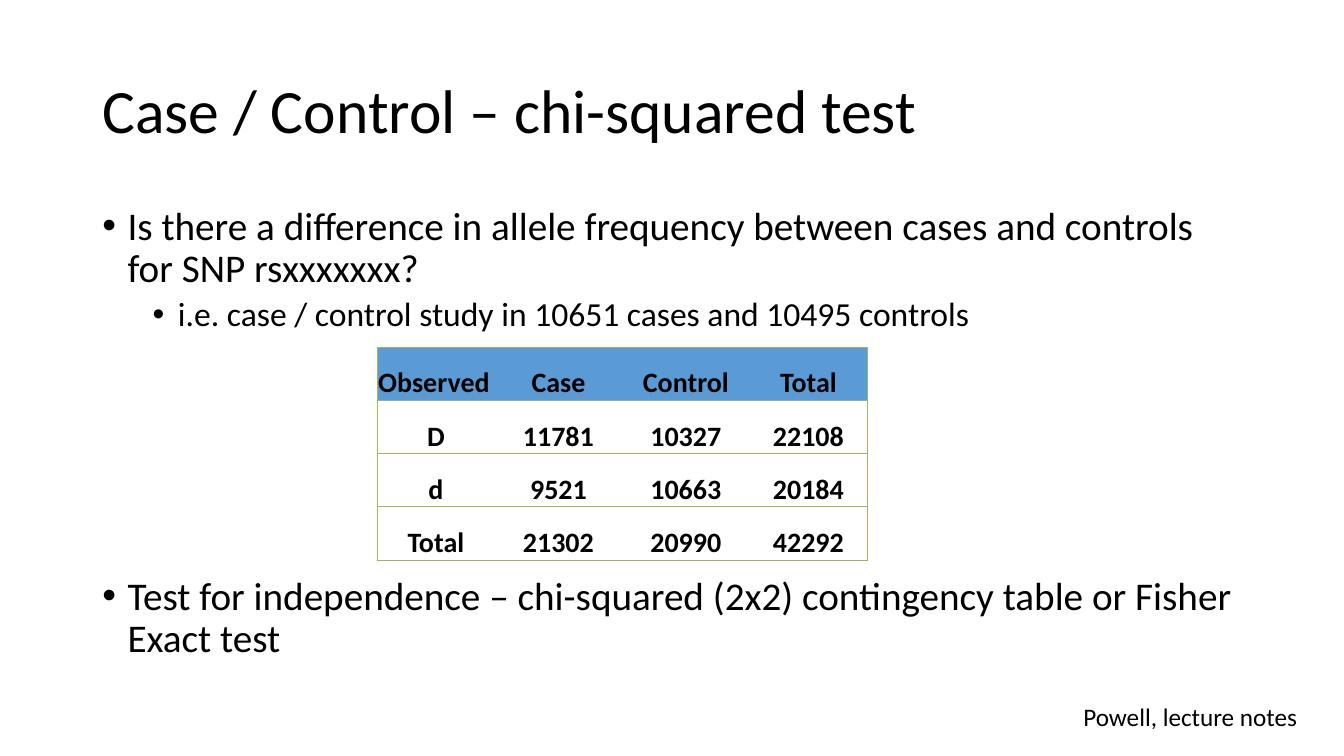
from lxml import etree
from pptx import Presentation
from pptx.dml.color import RGBColor
from pptx.enum.text import MSO_ANCHOR, PP_ALIGN
from pptx.oxml.ns import qn
from pptx.util import Cm, Pt

MIDDLE, TOP, BOTTOM = MSO_ANCHOR.MIDDLE, MSO_ANCHOR.TOP, MSO_ANCHOR.BOTTOM
LEFT, CENTER = PP_ALIGN.LEFT, PP_ALIGN.CENTER
BLACK = RGBColor(0x00, 0x00, 0x00)
HEADER_BLUE = RGBColor(0x5B, 0x9B, 0xD5)
BORDER_GREEN = RGBColor(0x9B, 0xBB, 0x59)

OBSERVED_COUNTS = [
    ["Observed", "Case", "Control", "Total"],
    ["D", "11781", "10327", "22108"],
    ["d", "9521", "10663", "20184"],
    ["Total", "21302", "20990", "42292"],
]
COLUMN_WIDTHS = [2.97, 3.21, 3.21, 2.97]
ROW_HEIGHT = 1.34


class SlideBuilder:
    font = "Calibri"

    def __init__(self, page):
        self.page = page

    def style(self, para, size, bold=False):
        for span in para.runs:
            span.font.name = self.font
            span.font.size = Pt(size)
            span.font.bold = bold
            span.font.color.rgb = BLACK

    def text(self, left, top, width, height, words, size, anchor=TOP, wrap=True):
        box = self.page.shapes.add_textbox(Cm(left), Cm(top), Cm(width), Cm(height))
        frame = box.text_frame
        frame.word_wrap = wrap
        frame.vertical_anchor = anchor
        frame.text = words
        self.style(frame.paragraphs[0], size)
        return frame

    def bullets(self, left, top, width, height, items):
        frame = self.text(left, top, width, height, "\n".join(item[0] for item in items), 28)
        for para, (_, level, size, space) in zip(frame.paragraphs, items):
            self.style(para, size)
            para.level = level
            para.line_spacing = 0.9
            para.space_before = Pt(space)
            properties = para._p.get_or_add_pPr()
            properties.set("marL", str(Cm(0.635 + 1.27 * level)))
            properties.set("indent", str(Cm(-0.635)))
            etree.SubElement(properties, qn("a:buFont"), typeface="Arial")
            etree.SubElement(properties, qn("a:buChar"), char="•")

    def borders(self, cell, visible):
        properties = cell._tc.get_or_add_tcPr()
        for position, side in enumerate("LRTB"):
            line = etree.Element(qn(f"a:ln{side}"), w=str(Pt(0.5)))
            if side in visible:
                fill = etree.SubElement(line, qn("a:solidFill"))
                etree.SubElement(fill, qn("a:srgbClr"), val=str(BORDER_GREEN))
            else:
                etree.SubElement(line, qn("a:noFill"))
            properties.insert(position, line)

    def table(self, left, top, widths, row_height, rows, size):
        frame = self.page.shapes.add_table(
            len(rows), len(widths), Cm(left), Cm(top),
            Cm(sum(widths)), Cm(row_height * len(rows)))
        grid = frame.table
        for column, width in zip(grid.columns, widths):
            column.width = Cm(width)
        for r, values in enumerate(rows):
            grid.rows[r].height = Cm(row_height)
            for c, value in enumerate(values):
                cell = grid.cell(r, c)
                cell.text = value
                cell.vertical_anchor = BOTTOM
                cell.margin_left = cell.margin_right = cell.margin_top = Cm(0.03)
                cell.margin_bottom = Cm(0)
                if r == 0:
                    cell.fill.solid()
                    cell.fill.fore_color.rgb = HEADER_BLUE
                else:
                    cell.fill.background()
                para = cell.text_frame.paragraphs[0]
                para.alignment = LEFT if r == c == 0 else CENTER
                self.style(para, size, bold=True)
                outer = "L" if c == 0 else "R" if c == len(widths) - 1 else ""
                self.borders(cell, "TB" + outer)


def main():
    deck = Presentation()
    deck.slide_width, deck.slide_height = Cm(33.87), Cm(19.05)
    builder = SlideBuilder(deck.slides.add_slide(deck.slide_layouts[6]))

    title = builder.text(2.33, 1.01, 29.21, 3.68, "Case / Control – chi-squared test", 44, MIDDLE)
    title.paragraphs[0].line_spacing = 0.9
    builder.bullets(2.33, 5.07, 29.21, 12.09, [
        ("Is there a difference in allele frequency between cases and controls "
         "for SNP rsxxxxxxx?", 0, 28, 10),
        ("i.e. case / control study in 10651 cases and 10495 controls", 1, 24, 5),
        ("Test for independence – chi-squared (2x2) contingency table or "
         "Fisher Exact test", 0, 28, 173),
    ])
    builder.table(9.5, 8.75, COLUMN_WIDTHS, ROW_HEIGHT, OBSERVED_COUNTS, 20)
    builder.text(27.05, 17.55, 5.97, 1.02, "Powell, lecture notes", 18, wrap=False)
    deck.save("out.pptx")


if __name__ == "__main__":
    main()
